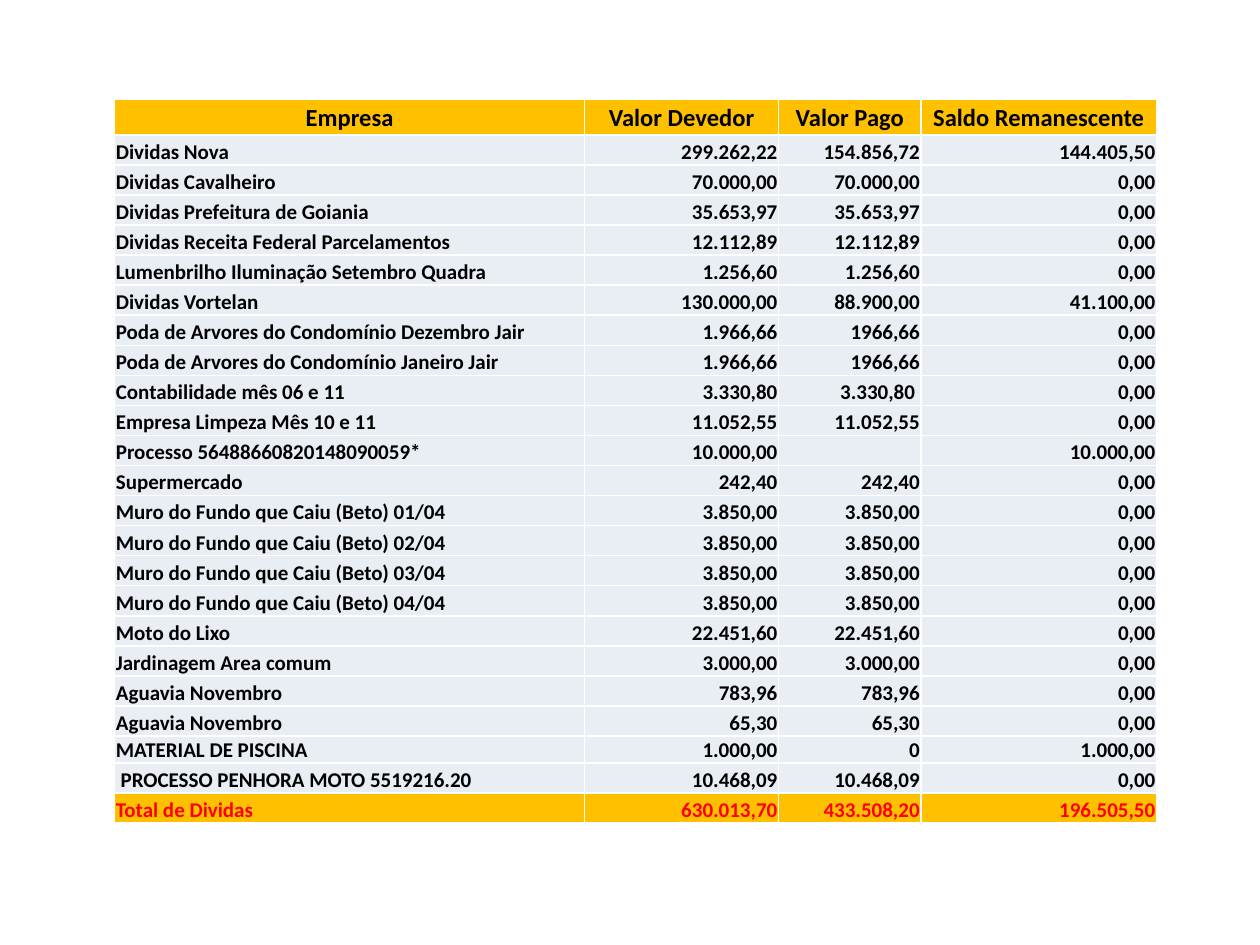
from lxml.etree import SubElement
from pptx import Presentation
from pptx.dml.color import RGBColor
from pptx.enum.text import MSO_ANCHOR as Anchor, PP_ALIGN as Align
from pptx.oxml.ns import qn
from pptx.util import Inches, Pt

"""Build a slide with the table of debts, payments and remaining balances."""

HEADINGS = ("Empresa", "Valor Devedor", "Valor Pago", "Saldo Remanescente")
DEBTS = [
    ("Dividas Nova", "299.262,22", "154.856,72", "144.405,50"),
    ("Dividas Cavalheiro", "70.000,00", "70.000,00", "0,00"),
    ("Dividas Prefeitura de Goiania", "35.653,97", "35.653,97", "0,00"),
    ("Dividas Receita Federal Parcelamentos", "12.112,89", "12.112,89", "0,00"),
    ("Lumenbrilho Iluminação Setembro Quadra", "1.256,60", "1.256,60", "0,00"),
    ("Dividas Vortelan", "130.000,00", "88.900,00", "41.100,00"),
    ("Poda de Arvores do Condomínio Dezembro Jair", "1.966,66", "1966,66", "0,00"),
    ("Poda de Arvores do Condomínio Janeiro Jair", "1.966,66", "1966,66", "0,00"),
    ("Contabilidade mês 06 e 11", "3.330,80", "3.330,80 ", "0,00"),
    ("Empresa Limpeza Mês 10 e 11", "11.052,55", "11.052,55", "0,00"),
    ("Processo 56488660820148090059*", "10.000,00", "", "10.000,00"),
    ("Supermercado", "242,40", "242,40", "0,00"),
    ("Muro do Fundo que Caiu (Beto) 01/04", "3.850,00", "3.850,00", "0,00"),
    ("Muro do Fundo que Caiu (Beto) 02/04", "3.850,00", "3.850,00", "0,00"),
    ("Muro do Fundo que Caiu (Beto) 03/04", "3.850,00", "3.850,00", "0,00"),
    ("Muro do Fundo que Caiu (Beto) 04/04", "3.850,00", "3.850,00", "0,00"),
    ("Moto do Lixo", "22.451,60", "22.451,60", "0,00"),
    ("Jardinagem Area comum", "3.000,00", "3.000,00", "0,00"),
    ("Aguavia Novembro", "783,96", "783,96", "0,00"),
    ("Aguavia Novembro", "65,30", "65,30", "0,00"),
    ("MATERIAL DE PISCINA", "1.000,00", "0", "1.000,00"),
    (" PROCESSO PENHORA MOTO 5519216.20", "10.468,09", "10.468,09", "0,00"),
]
TOTAL = ("Total de Dividas", "630.013,70", "433.508,20", "196.505,50")

THEME = {
    "font": "Calibri",
    "heading_size": 14,
    "body_size": 12,
    "ink": "000000",
    "total_ink": "FF0000",
    "accent": "FFC000",
    "body": "E9EDF4",
    "border": "FFFFFF",
}
LEFT, TOP, WIDTH, HEIGHT = 0.91, 0.79, 8.27, 5.73
COLUMN_WIDTHS = (3.73, 1.54, 1.13, 1.87)
HEADING_HEIGHT, POOL_HEIGHT = 0.28, 0.2
POOL_ROW = 21


def add_borders(cell):
    properties = cell._tc.get_or_add_tcPr()
    for side in ("a:lnL", "a:lnR", "a:lnT", "a:lnB"):
        line = SubElement(properties, qn(side), w=str(Pt(1)))
        SubElement(SubElement(line, qn("a:solidFill")), qn("a:srgbClr"), val=THEME["border"])


def write_cell(cell, text, *, size, ink, fill, align, anchor):
    add_borders(cell)
    cell.fill.solid()
    cell.fill.fore_color.rgb = RGBColor.from_string(fill)
    cell.margin_left = cell.margin_right = cell.margin_top = Inches(0.01)
    cell.margin_bottom = 0
    cell.vertical_anchor = anchor
    paragraph = cell.text_frame.paragraphs[0]
    paragraph.alignment = align
    if not text:
        SubElement(paragraph._p, qn("a:endParaRPr"), sz=str(size * 100))
        return
    run = paragraph.add_run()
    run.text = text
    run.font.name = THEME["font"]
    run.font.size = Pt(size)
    run.font.bold = True
    run.font.color.rgb = RGBColor.from_string(ink)


def main():
    deck = Presentation()
    deck.slide_width, deck.slide_height = Inches(10), Inches(7.5)
    slide = deck.slides.add_slide(deck.slide_layouts[6])

    records = [HEADINGS, *DEBTS, TOTAL]
    last = len(records) - 1
    frame = (Inches(length) for length in (LEFT, TOP, WIDTH, HEIGHT))
    table = slide.shapes.add_table(len(records), len(HEADINGS), *frame).table
    table.horz_banding = False

    for column, width in zip(table.columns, COLUMN_WIDTHS):
        column.width = Inches(width)
    special_heights = {0: HEADING_HEIGHT, POOL_ROW: POOL_HEIGHT}
    usual_height = (HEIGHT - sum(special_heights.values())) / (len(records) - len(special_heights))

    for row, record in enumerate(records):
        table.rows[row].height = Inches(special_heights.get(row, usual_height))
        heading = row == 0
        for column, text in enumerate(record):
            body_align = Align.RIGHT if column else Align.LEFT
            write_cell(
                table.cell(row, column),
                text,
                size=THEME["heading_size" if heading else "body_size"],
                ink=THEME["total_ink" if row == last else "ink"],
                fill=THEME["accent" if row in (0, last) else "body"],
                align=Align.CENTER if heading else body_align,
                anchor=Anchor.MIDDLE if heading else Anchor.BOTTOM,
            )

    deck.save("out.pptx")


if __name__ == "__main__":
    main()
